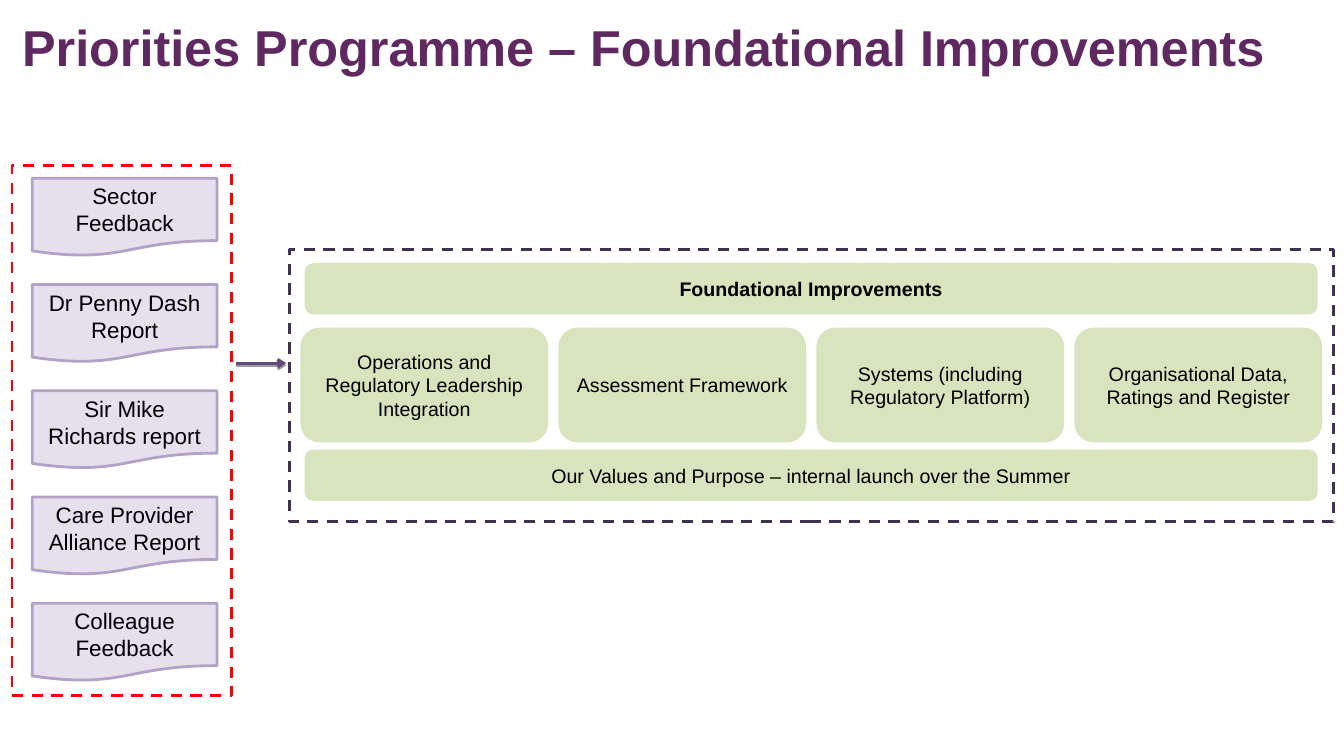
from dataclasses import dataclass

from lxml.etree import SubElement
from pptx import Presentation
from pptx.dml.color import RGBColor as RGB
from pptx.enum.dml import MSO_LINE as Dash
from pptx.enum.shapes import MSO_CONNECTOR as Link, MSO_SHAPE as Kind
from pptx.enum.text import MSO_ANCHOR as Anchor, PP_ALIGN as Align
from pptx.oxml.ns import qn
from pptx.util import Pt


@dataclass(frozen=True)
class Theme:
    font: str = "Arial"
    title: RGB = RGB(0x5F, 0x28, 0x61)
    text: RGB = RGB(0, 0, 0)
    paper: RGB = RGB(0xE6, 0xE0, 0xEC)
    edge: RGB = RGB(0xB3, 0xA2, 0xC7)
    green: RGB = RGB(0xD7, 0xE4, 0xBD)
    red: RGB = RGB(0xFF, 0, 0)
    dark: RGB = RGB(0x40, 0x31, 0x52)
    arrow: RGB = RGB(0x60, 0x4A, 0x7B)
    head: Pt = Pt(36)
    large: Pt = Pt(16)
    small: Pt = Pt(14)
    line: Pt = Pt(2)


THEME = Theme()

REPORTS = [
    "Sector Feedback",
    "Dr Penny Dash Report",
    "Sir Mike Richards report",
    "Care Provider Alliance Report",
    "Colleague Feedback",
]
THEMES = [
    "Operations and Regulatory Leadership Integration",
    "Assessment Framework",
    "Systems (including Regulatory Platform)",
    "Organisational Data, Ratings and Register",
]


def write(frame, text, size, color, bold=False, align=Align.CENTER):
    frame.word_wrap = True
    frame.text = text
    para = frame.paragraphs[0]
    para.alignment = align
    font = para.runs[0].font
    font.name, font.size, font.bold = THEME.font, size, bold
    font.color.rgb = color


def add_title(slide, text):
    title = slide.shapes.title
    title.left, title.top = Pt(8.6), Pt(8)
    title.width, title.height = Pt(946), Pt(66)
    write(title.text_frame, text, THEME.head, THEME.title, True, Align.LEFT)
    title.text_frame.vertical_anchor = Anchor.TOP


def add_box(slide, kind, box, fill=None, line=None):
    shape = slide.shapes.add_shape(kind, *map(Pt, box))
    shape.shadow.inherit = False
    if fill is None:
        shape.fill.background()
    else:
        shape.fill.solid()
        shape.fill.fore_color.rgb = fill
    if line is None:
        shape.line.fill.background()
    else:
        shape.line.color.rgb = line
        shape.line.width = THEME.line
    return shape


def add_frame(slide, box, color):
    add_box(slide, Kind.RECTANGLE, box, line=color).line.dash_style = Dash.DASH


def add_paper(slide, box, text):
    shape = add_box(slide, Kind.FLOWCHART_DOCUMENT, box, THEME.paper, THEME.edge)
    shape.text_frame.vertical_anchor = Anchor.MIDDLE
    write(shape.text_frame, text, THEME.large, THEME.text)


def add_tile(slide, box, text, bold=False):
    shape = add_box(slide, Kind.ROUNDED_RECTANGLE, box, THEME.green)
    shape.text_frame.vertical_anchor = Anchor.MIDDLE
    write(shape.text_frame, text, THEME.small, THEME.text, bold)


def add_arrow(slide, left, right, y):
    """Draw a level arrow with a thin shadow below it."""
    arrow = slide.shapes.add_connector(
        Link.STRAIGHT, Pt(left), Pt(y), Pt(right), Pt(y))
    arrow.line.color.rgb = THEME.arrow
    arrow.line.width = THEME.line
    SubElement(arrow.line._get_or_add_ln(), qn("a:tailEnd"), type="arrow")
    effects = SubElement(arrow._element.spPr, qn("a:effectLst"))
    shadow = SubElement(effects, qn("a:outerShdw"), blurRad="0",
                        dist=str(Pt(1.6)), dir="5400000", rotWithShape="0")
    color = SubElement(shadow, qn("a:srgbClr"), val=str(THEME.text))
    SubElement(color, qn("a:alpha"), val="38000")


def main():
    deck = Presentation()
    deck.slide_width, deck.slide_height = Pt(960), Pt(540)
    slide = deck.slides.add_slide(deck.slide_layouts[5])
    add_title(slide, "Priorities Programme – Foundational Improvements")

    add_frame(slide, (8.6, 118.3, 157, 378.7), THEME.red)
    for row, text in enumerate(REPORTS):
        add_paper(slide, (23, 127.3 + 75.9 * row, 132, 55.6), text)

    add_arrow(slide, 168.5, 204.5, 259.4)

    add_frame(slide, (206.6, 178.5, 746, 194.3), THEME.dark)
    add_tile(slide, (217.6, 188, 723.6, 36.6), "Foundational Improvements", True)
    for col, text in enumerate(THEMES):
        add_tile(slide, (214.6 + 184.3 * col, 234, 177, 82), text)
    add_tile(slide, (217.6, 321.2, 723.6, 36.6),
             "Our Values and Purpose – internal launch over the Summer")

    deck.save("out.pptx")


if __name__ == "__main__":
    main()
